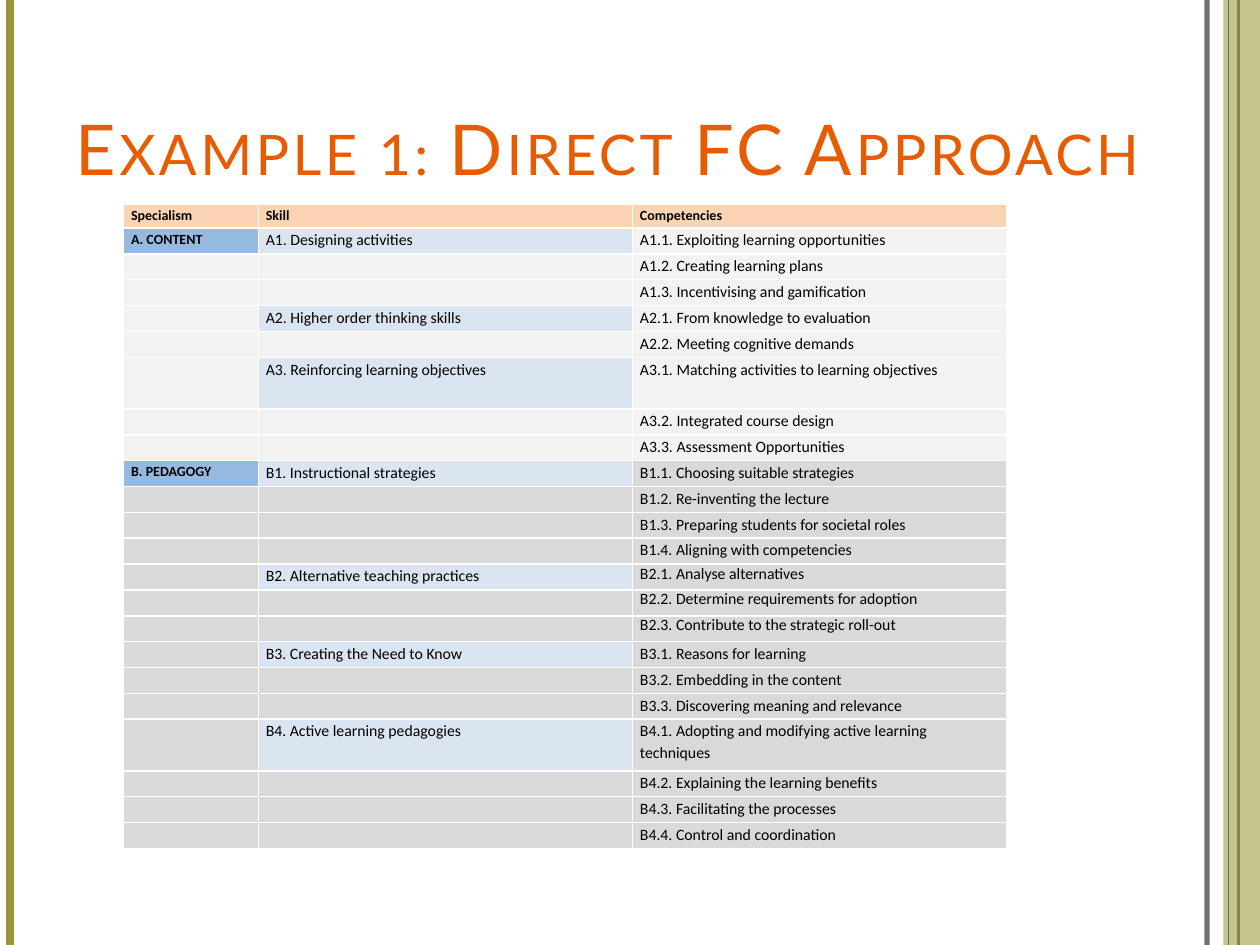
from lxml.etree import SubElement
from pptx import Presentation
from pptx.dml.color import RGBColor
from pptx.enum.shapes import MSO_CONNECTOR, MSO_SHAPE
from pptx.enum.text import MSO_ANCHOR
from pptx.oxml import parse_xml
from pptx.oxml.ns import nsdecls, qn
from pptx.util import Inches, Pt

ORANGE = RGBColor(0xE7, 0x5C, 0x01)
OLIVE = RGBColor(0x98, 0x98, 0x36)
GRAY = RGBColor(0x66, 0x66, 0x66)
BLACK = RGBColor(0, 0, 0)
PEACH = RGBColor(0xFB, 0xD4, 0xB4)
BLUE = RGBColor(0x96, 0xB9, 0xE0)
PALE_BLUE = RGBColor(0xDB, 0xE5, 0xF1)
LIGHT_GRAY = RGBColor(0xF2, 0xF2, 0xF2)
MID_GRAY = RGBColor(0xD9, 0xD9, 0xD9)

TITLE = "Example 1: Direct FC Approach"
HEADERS = ["Specialism", "Skill", "Competencies"]
# Specialism, row colour, skills with their competencies
SPECIALISMS = [
    ("A. CONTENT", LIGHT_GRAY, [
        ("A1. Designing activities", [
            "A1.1. Exploiting learning opportunities",
            "A1.2. Creating learning plans",
            "A1.3. Incentivising and gamification"]),
        ("A2. Higher order thinking skills", [
            "A2.1. From knowledge to evaluation",
            "A2.2. Meeting cognitive demands"]),
        ("A3. Reinforcing learning objectives", [
            "A3.1. Matching activities to learning objectives",
            "A3.2. Integrated course design",
            "A3.3. Assessment Opportunities"]),
    ]),
    ("B. PEDAGOGY", MID_GRAY, [
        ("B1. Instructional strategies", [
            "B1.1. Choosing suitable strategies",
            "B1.2. Re-inventing the lecture",
            "B1.3. Preparing students for societal roles",
            "B1.4. Aligning with competencies"]),
        ("B2. Alternative teaching practices", [
            "B2.1. Analyse alternatives",
            "B2.2. Determine requirements for adoption",
            "B2.3. Contribute to the strategic roll-out"]),
        ("B3. Creating the Need to Know", [
            "B3.1. Reasons for learning",
            "B3.2. Embedding in the content",
            "B3.3. Discovering meaning and relevance"]),
        ("B4. Active learning pedagogies", [
            "B4.1. Adopting and modifying active learning techniques",
            "B4.2. Explaining the learning benefits",
            "B4.3. Facilitating the processes",
            "B4.4. Control and coordination"]),
    ]),
]
DOUBLE_ROWS = ("A3.1.", "B4.1.")
SINGLE_SPACED = "B2."

SLIDE_WIDTH, SLIDE_HEIGHT = 10, 7.5
COLUMN_WIDTHS = [1.07, 2.97, 2.97]
TABLE_LEFT, TABLE_TOP, TABLE_HEIGHT, HEADER_HEIGHT = 0.98, 1.62, 5.12, 0.19
# x, colour, width in points, opacity in percent
LINES_BEHIND = [(9.58, GRAY, 3, 93), (0.08, OLIVE, 4.5, 100), (9.83, GRAY, 1.5, 100)]
LINES_IN_FRONT = [(9.75, GRAY, 0.75, 100)]

HEADING = {"name": "Calibri", "size": Pt(8), "bold": True, "color": BLACK}
BODY = {"name": "Calibri", "size": Pt(9), "bold": False, "color": BLACK}
TITLE_FORMAT = {"name": "Lato", "size": Pt(40), "bold": False, "color": ORANGE}


def format_font(font, values):
    for name, value in values.items():
        if name == "color":
            font.color.rgb = value
        else:
            setattr(font, name, value)


def set_opacity(fill_parent, percent):
    color = fill_parent.find(".//" + qn("a:srgbClr"))
    SubElement(color, qn("a:alpha")).set("val", str(percent * 1000))


def add_vertical_line(slide, x, color, width, opacity):
    line = slide.shapes.add_connector(
        MSO_CONNECTOR.STRAIGHT, Inches(x), 0, Inches(x), Inches(SLIDE_HEIGHT))
    line.line.color.rgb = color
    line.line.width = Pt(width)
    properties = line._element.spPr
    if opacity < 100:
        set_opacity(properties, opacity)
    SubElement(properties, qn("a:effectLst"))


def fill_cell(cell, text, color, values, spacing):
    for side in ("top", "bottom"):
        setattr(cell, f"margin_{side}", 0)
    for side in ("left", "right"):
        setattr(cell, f"margin_{side}", Inches(0.06))
    cell.fill.solid()
    cell.fill.fore_color.rgb = color
    paragraph = cell.text_frame.paragraphs[0]
    if text:
        paragraph.line_spacing = spacing
        run = paragraph.add_run()
        run.text = text
        format_font(run.font, values)
    else:
        SubElement(paragraph._p, qn("a:endParaRPr")).set("sz", "900")
    # White borders come before the fill in the cell properties
    for index, edge in enumerate(("lnL", "lnR", "lnT", "lnB")):
        cell._tc.tcPr.insert(index, parse_xml(
            f'<a:{edge} {nsdecls("a")} w="12700"><a:solidFill>'
            f'<a:srgbClr val="FFFFFF"/></a:solidFill></a:{edge}>'))


def table_rows():
    """Each row is a list of (text, fill, font values)."""
    rows = [[(header, PEACH, HEADING) for header in HEADERS]]
    for specialism, row_color, skills in SPECIALISMS:
        for skill_index, (skill, competencies) in enumerate(skills):
            for index, competency in enumerate(competencies):
                blank = ("", row_color, BODY)
                first = index == 0
                rows.append([
                    (specialism, BLUE, HEADING) if first and skill_index == 0 else blank,
                    (skill, PALE_BLUE, BODY) if first else blank,
                    (competency, row_color, BODY)])
    return rows


def add_competency_table(slide):
    rows = table_rows()
    units = [2 if row[2][0].startswith(DOUBLE_ROWS) else 1 for row in rows[1:]]
    unit_height = (TABLE_HEIGHT - HEADER_HEIGHT) / sum(units)
    heights = [HEADER_HEIGHT] + [unit * unit_height for unit in units]
    table = slide.shapes.add_table(
        len(rows), len(HEADERS), Inches(TABLE_LEFT), Inches(TABLE_TOP),
        Inches(sum(COLUMN_WIDTHS)), Inches(TABLE_HEIGHT)).table
    table.horz_banding = False
    for column, width in zip(table.columns, COLUMN_WIDTHS):
        column.width = Inches(width)
    for row_index, (row, height) in enumerate(zip(rows, heights)):
        table.rows[row_index].height = Inches(height)
        for column_index, (text, color, values) in enumerate(row):
            single = column_index == 2 and text.startswith(SINGLE_SPACED)
            fill_cell(table.cell(row_index, column_index), text, color, values,
                      1.0 if single else 1.15)


def add_title(slide):
    box = slide.shapes.add_textbox(Inches(0.5), Inches(0.3), Inches(8.67), Inches(1.25))
    frame = box.text_frame
    frame.word_wrap = True
    frame.margin_right = 0
    frame.vertical_anchor = MSO_ANCHOR.BOTTOM
    run = frame.paragraphs[0].add_run()
    run.text = TITLE
    format_font(run.font, TITLE_FORMAT)
    properties = run._r.get_or_add_rPr()
    properties.set("cap", "small")
    properties.set("spc", "200")


def main():
    presentation = Presentation()
    presentation.slide_width = Inches(SLIDE_WIDTH)
    presentation.slide_height = Inches(SLIDE_HEIGHT)
    slide = presentation.slides.add_slide(presentation.slide_layouts[6])

    # Side decoration
    for line in LINES_BEHIND:
        add_vertical_line(slide, *line)
    band = slide.shapes.add_shape(
        MSO_SHAPE.RECTANGLE, Inches(9.71), 0, Inches(0.33), Inches(SLIDE_HEIGHT))
    band.shadow.inherit = False
    band.fill.solid()
    band.fill.fore_color.rgb = OLIVE
    set_opacity(band._element.spPr, 56)
    band.line.fill.background()
    for line in LINES_IN_FRONT:
        add_vertical_line(slide, *line)

    # Content
    add_title(slide)
    add_competency_table(slide)
    presentation.save("out.pptx")


if __name__ == "__main__":
    main()
